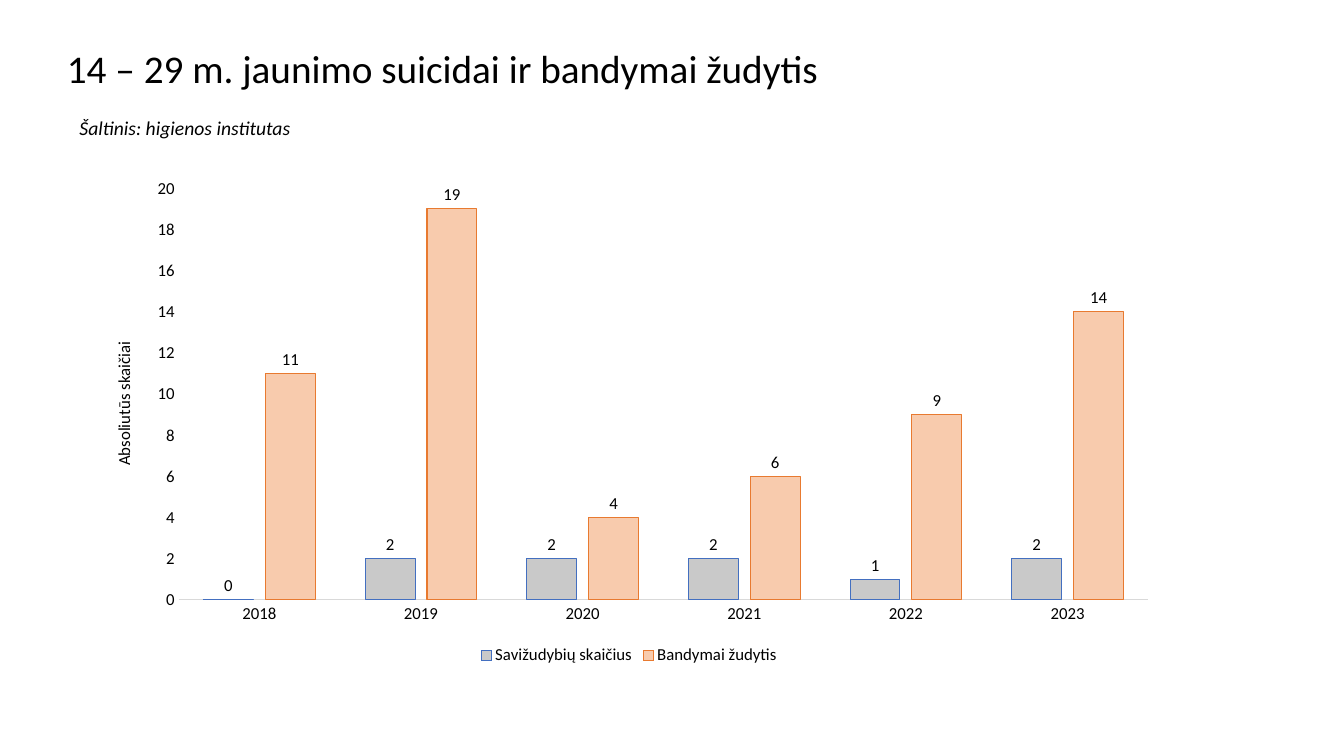
from lxml import etree
from pptx import Presentation
from pptx.chart.data import CategoryChartData
from pptx.dml.color import RGBColor
from pptx.enum.chart import XL_CHART_TYPE as ChartType
from pptx.enum.chart import XL_LABEL_POSITION as LabelPosition
from pptx.enum.chart import XL_LEGEND_POSITION as LegendPosition
from pptx.enum.chart import XL_TICK_MARK as TickMark
from pptx.enum.text import MSO_ANCHOR, PP_ALIGN
from pptx.oxml.ns import qn
from pptx.util import Pt

THEME = {
    "font": "Calibri",
    "text": RGBColor.from_string("000000"),
    "axis": RGBColor.from_string("D9D9D9"),
    "title": Pt(28),
    "source": Pt(14),
    "chart": Pt(12),
}
SERIES = [
    ("Savižudybių skaičius", (0, 2, 2, 2, 1, 2), "C9C9C9", "436FC0"),
    ("Bandymai žudytis", (11, 19, 4, 6, 9, 14), "F8CBAD", "E87A30"),
]


def format_font(font, size, italic=False):
    values = {"name": THEME["font"], "size": THEME[size], "bold": False, "italic": italic}
    for name, value in values.items():
        setattr(font, name, value)
    font.color.rgb = THEME["text"]


def set_layout(parent, position, values):
    for old_layout in parent.findall(qn("c:layout")):
        parent.remove(old_layout)
    layout = etree.Element(qn("c:layout"))
    manual = etree.SubElement(layout, qn("c:manualLayout"))
    for name, value in values.items():
        etree.SubElement(manual, qn(f"c:{name}")).set("val", str(value))
    parent.insert(position, layout)


presentation = Presentation()
presentation.slide_width = Pt(960)
presentation.slide_height = Pt(540)
slide = presentation.slides.add_slide(presentation.slide_layouts[5])

title = slide.shapes.title
source = slide.shapes.add_textbox(Pt(49.7), Pt(81.4), Pt(861), Pt(22.3))
for name, value in {"left": 33.8, "top": 14.4, "width": 892.8, "height": 72.7}.items():
    setattr(title, name, Pt(value))

texts = [
    (title, "14 – 29 m. jaunimo suicidai ir bandymai žudytis", "title", False, 14),
    (source, "Šaltinis: higienos institutas", "source", True, 7.2),
]
for shape, text, size, italic, margin in texts:
    frame = shape.text_frame
    frame.text = text
    frame.word_wrap = True
    frame.vertical_anchor = MSO_ANCHOR.MIDDLE
    frame.margin_left = Pt(margin)
    paragraph = frame.paragraphs[0]
    paragraph.alignment = PP_ALIGN.LEFT
    paragraph.line_spacing = 0.9
    format_font(paragraph.runs[0].font, size, italic)

data = CategoryChartData()
data.categories = [str(year) for year in range(2018, 2024)]
for name, values, fill, line in SERIES:
    data.add_series(name, values)
chart = slide.shapes.add_chart(
    ChartType.COLUMN_CLUSTERED, Pt(62.6), Pt(120.2), Pt(773.3), Pt(357.8), data
).chart
format_font(chart.font, "chart")
chart.has_title = False
chart.has_legend = True
chart.legend.position = LegendPosition.BOTTOM
chart.legend.include_in_layout = False
format_font(chart.legend.font, "chart")

plot = chart.plots[0]
for name, value in {"gap_width": 100, "overlap": -24, "vary_by_categories": False}.items():
    setattr(plot, name, value)
for series, (name, values, fill, line) in zip(plot.series, SERIES):
    series.format.fill.solid()
    series.format.fill.fore_color.rgb = RGBColor.from_string(fill)
    series.format.line.color.rgb = RGBColor.from_string(line)
    series.format.line.width = Pt(0.75)
    labels = series.data_labels
    labels.show_value = True
    labels.position = LabelPosition.OUTSIDE_END
    format_font(labels.font, "chart")

for axis in (chart.category_axis, chart.value_axis):
    axis.major_tick_mark = TickMark.NONE
    axis.minor_tick_mark = TickMark.NONE
    axis.has_major_gridlines = False
    format_font(axis.tick_labels.font, "chart")
chart.category_axis.format.line.color.rgb = THEME["axis"]
chart.category_axis.format.line.width = Pt(0.75)

value_axis = chart.value_axis
value_axis.format.line.fill.background()
for name, value in {"minimum_scale": 0, "maximum_scale": 20, "major_unit": 2}.items():
    setattr(value_axis, name, value)
axis_title = value_axis.axis_title
axis_title.text_frame.text = "Absoliutūs skaičiai"
format_font(axis_title.text_frame.paragraphs[0].runs[0].font, "chart")
body = axis_title.text_frame._txBody.find(qn("a:bodyPr"))
body.set("rot", "-5400000")
body.set("vert", "horz")

set_layout(axis_title._element, 1, {"xMode": "edge", "yMode": "edge", "x": 0.02, "y": 0.34})
plot_area = chart._chartSpace.chart.plotArea
set_layout(plot_area, 0, {
    "layoutTarget": "inner", "xMode": "edge", "yMode": "edge",
    "x": 0.084, "y": 0.04, "w": 0.896, "h": 0.822,
})

presentation.save("out.pptx")
